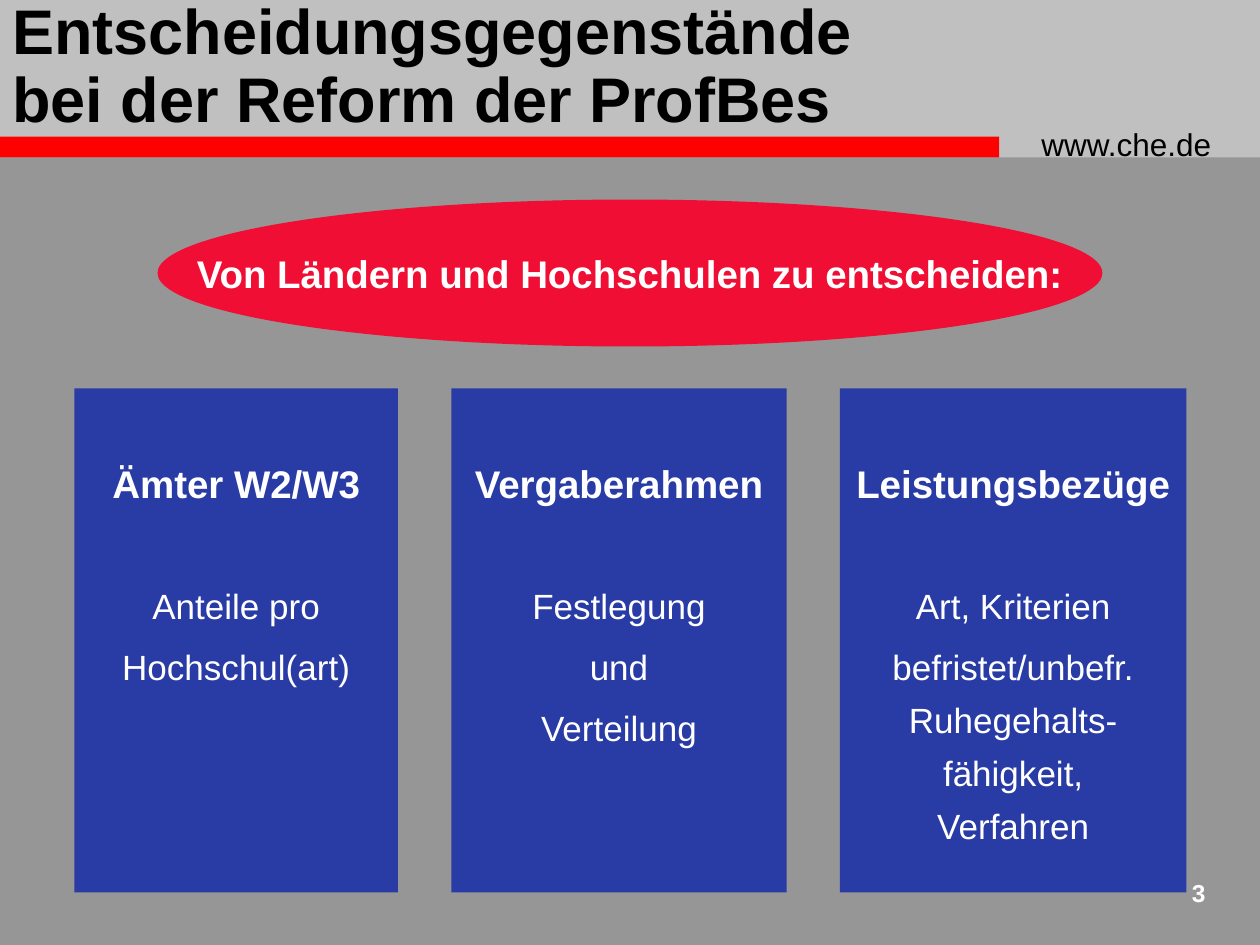
import pptx
import pptx.util
import pptx.dml.color
import pptx.enum.shapes
import pptx.enum.text

Pt = pptx.util.Pt
SHAPE = pptx.enum.shapes.MSO_SHAPE
ALIGN = pptx.enum.text.PP_ALIGN
ANCHOR = pptx.enum.text.MSO_ANCHOR

COLORS = {
    "background": "969696",
    "header": "C0C0C0",
    "rule": "FF0000",
    "ellipse": "F00E34",
    "column": "293BA5",
    "dark": "000000",
    "light": "FFFFFF",
}


class Deck:
    font = "Arial"

    def __init__(self, width, height):
        self.prs = pptx.Presentation()
        self.prs.slide_width, self.prs.slide_height = Pt(width), Pt(height)
        self.s = self.prs.slides.add_slide(self.prs.slide_layouts[6])
        self.paint(self.s.background.fill, "background")

    def color(self, name):
        return pptx.dml.color.RGBColor.from_string(COLORS[name])

    def paint(self, fill, name):
        fill.solid()
        fill.fore_color.rgb = self.color(name)

    def shape(self, kind, box, fill):
        sp = self.s.shapes.add_shape(kind, *map(Pt, box))
        sp.shadow.inherit = False
        self.paint(sp.fill, fill)
        sp.line.fill.background()
        return sp

    def paragraph(self, p, text, size, color="light", bold=False, align=ALIGN.CENTER):
        p.text = text
        p.alignment = align
        p.font.name = self.font
        p.font.size = Pt(size)
        p.font.bold = bold
        p.font.color.rgb = self.color(color)

    def label(self, box, text, size, color, bold=False, align=ALIGN.LEFT,
              anchor=ANCHOR.TOP, line_spacing=1.0):
        tf = self.s.shapes.add_textbox(*map(Pt, box)).text_frame
        tf.word_wrap = True
        tf.vertical_anchor = anchor
        p = tf.paragraphs[0]
        self.paragraph(p, text, size, color, bold, align)
        p.line_spacing = line_spacing

    def ellipse(self, box, text):
        tf = self.shape(SHAPE.OVAL, box, "ellipse").text_frame
        tf.word_wrap = False
        tf.vertical_anchor = ANCHOR.MIDDLE
        self.paragraph(tf.paragraphs[0], text, 22, bold=True)

    def column(self, box, heading, lines, tight_lines):
        tf = self.shape(SHAPE.RECTANGLE, box, "column").text_frame
        tf.word_wrap = False
        tf.vertical_anchor = ANCHOR.TOP
        tf.margin_top = Pt(41)
        self.paragraph(tf.paragraphs[0], heading, 22, bold=True)
        for i, text in enumerate(lines + tight_lines):
            p = tf.add_paragraph()
            self.paragraph(p, text, 20)
            p.space_before = Pt(11 if i else 44.5)
            p.line_spacing = 1.0 if i < len(lines) else 0.8


def main():
    deck = Deck(720, 540)
    deck.shape(SHAPE.RECTANGLE, (0, 0, 720, 90), "header")
    deck.shape(SHAPE.RECTANGLE, (0, 78, 571, 12), "rule")
    deck.label((588, 68, 126, 29), "www.che.de", 18, "dark")
    deck.label((654, 498, 42, 30), "3", 14, "light", True, ALIGN.RIGHT)
    deck.label((0, 0, 582, 78), "Entscheidungsgegenstände\vbei der Reform der ProfBes",
               36, "dark", True, anchor=ANCHOR.MIDDLE, line_spacing=0.9)
    deck.ellipse((90, 114, 540, 84), "Von Ländern und Hochschulen zu entscheiden:")

    columns = [
        (185, "Ämter W2/W3", ["Anteile pro", "Hochschul(art)"], []),
        (191.5, "Vergaberahmen", ["Festlegung", "und", "Verteilung"], []),
        (198, "Leistungsbezüge", ["Art, Kriterien", "befristet/unbefr."],
         ["Ruhegehalts-", "fähigkeit,", "Verfahren"]),
    ]
    left, gap = 42.5, 30.5
    for width, heading, lines, tight_lines in columns:
        deck.column((left, 222, width, 288), heading, lines, tight_lines)
        left += width + gap

    deck.prs.save("out.pptx")


if __name__ == "__main__":
    main()
